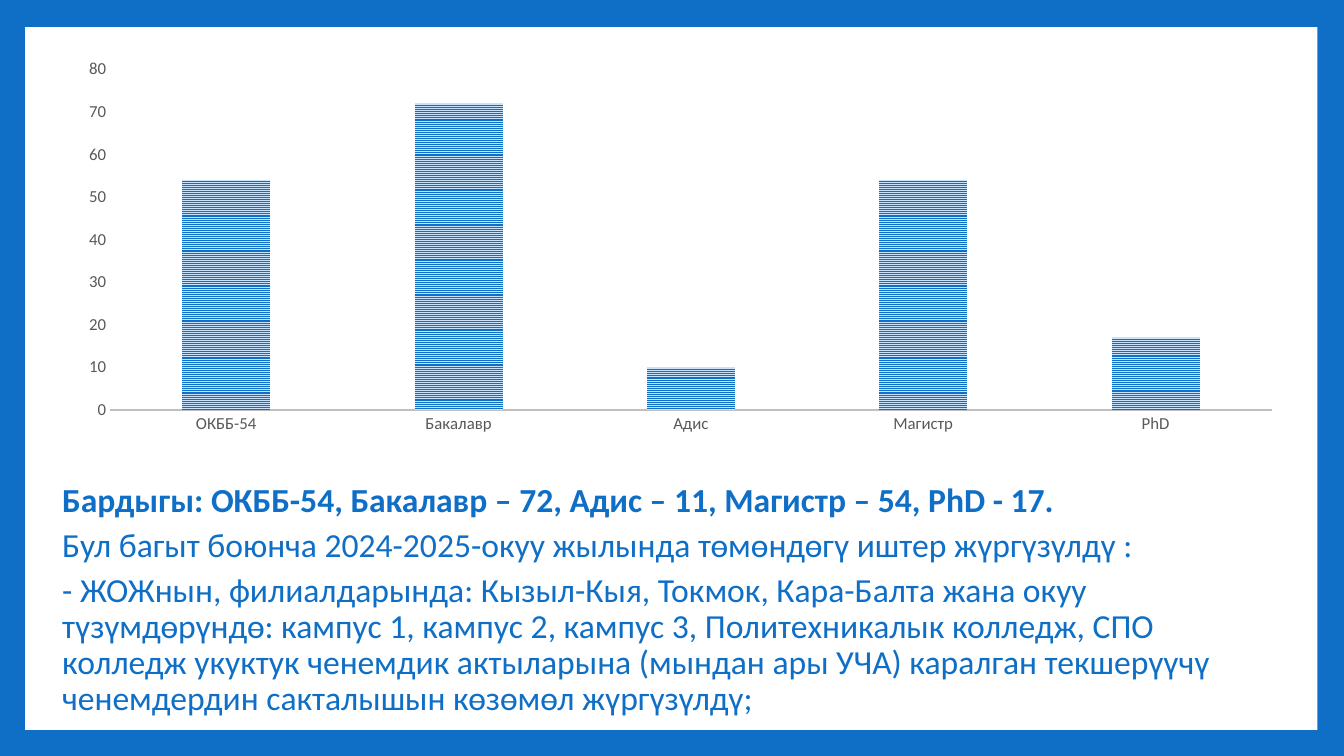
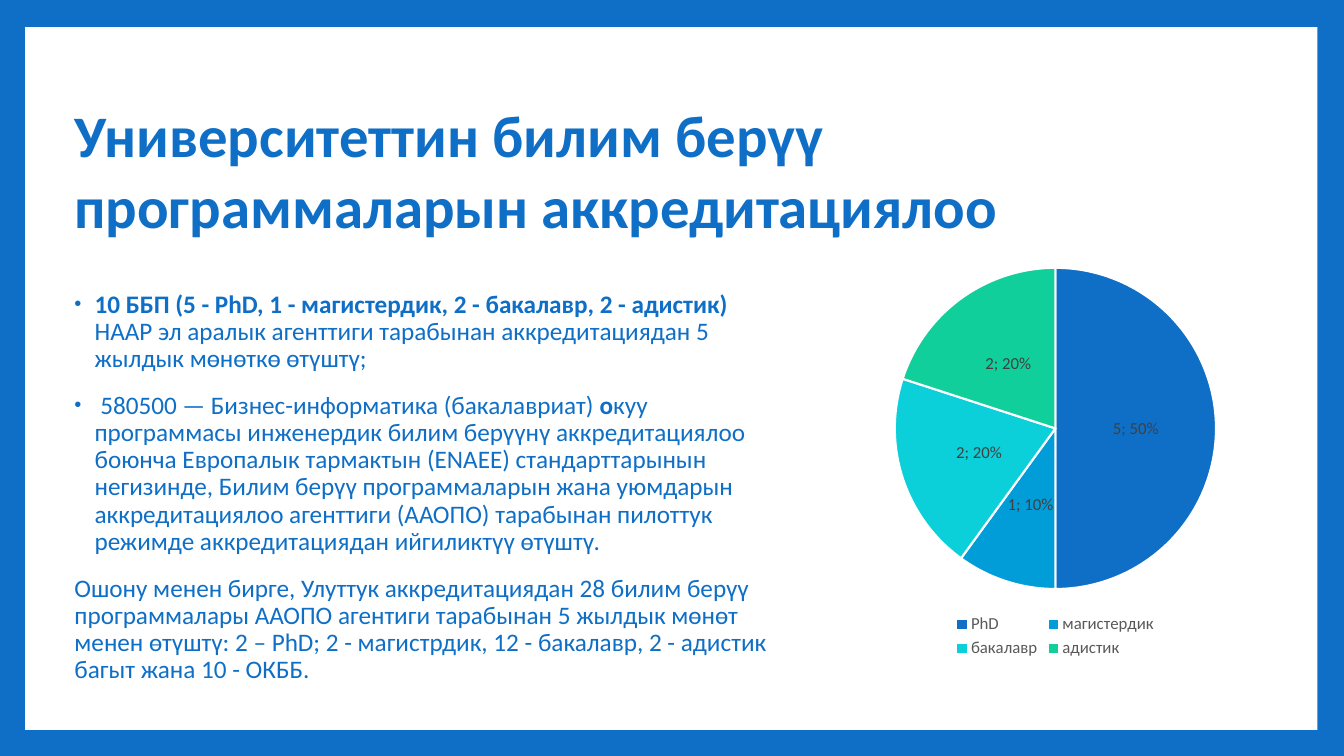
from lxml.etree import SubElement
from pptx import Presentation
from pptx.chart.data import CategoryChartData
from pptx.dml.color import RGBColor
from pptx.enum.chart import (
    XL_CHART_TYPE, XL_LABEL_POSITION, XL_LEGEND_POSITION, XL_TICK_MARK)
from pptx.enum.dml import MSO_PATTERN
from pptx.enum.shapes import MSO_SHAPE
from pptx.oxml.ns import qn
from pptx.util import Pt

BARS = XL_CHART_TYPE.COLUMN_CLUSTERED
PIE = XL_CHART_TYPE.PIE
CENTER = XL_LABEL_POSITION.CENTER
BOTTOM = XL_LEGEND_POSITION.BOTTOM
NONE = XL_TICK_MARK.NONE
LINES = MSO_PATTERN.NARROW_HORIZONTAL
RECT = MSO_SHAPE.RECTANGLE

HUES = {
    "blue": "0F6FC6", "sky": "009DD9", "aqua": "0BD0D9", "green": "10CF9B",
    "pale": "C8E3FB", "white": "FFFFFF", "axis": "BFBFBF",
    "gray": "595959", "dark": "404040", "black": "000000",
}


def hue(name):
    return RGBColor.from_string(HUES[name])


def put(item, **values):
    for key, value in values.items():
        setattr(item, key, value)


class Deck:
    """Hold the shared style and the current slide."""

    face = "Calibri"

    def __init__(self):
        self.show = Presentation()
        put(self.show, slide_width=Pt(960), slide_height=Pt(540))
        self.slide = None

    def page(self):
        self.slide = self.show.slides.add_slide(self.show.slide_layouts[6])
        back = self.slide.background.fill
        back.solid()
        back.fore_color.rgb = hue("blue")
        panel = self.slide.shapes.add_shape(
            RECT, *map(Pt, (18, 19.4, 923, 502)))
        panel.shadow.inherit = False
        panel.fill.solid()
        panel.fill.fore_color.rgb = hue("white")
        panel.line.fill.background()

    def font(self, font, size, color="blue", bold=False):
        put(font, name=self.face, size=Pt(size), bold=bold)
        font.color.rgb = hue(color)

    def bullet(self, props):
        color = SubElement(props, qn("a:buClr"))
        SubElement(color, qn("a:srgbClr"), val=HUES["blue"])
        SubElement(props, qn("a:buSzPct"), val="80000")
        SubElement(props, qn("a:buFont"), typeface="Arial")
        SubElement(props, qn("a:buChar"), char="•")

    def text(self, box, paras, size, gap=0, lead=0.9):
        frame = self.slide.shapes.add_textbox(*map(Pt, box)).text_frame
        frame.word_wrap = True
        for num, (dot, runs) in enumerate(paras):
            para = frame.add_paragraph() if num else frame.paragraphs[0]
            props = para._p.get_or_add_pPr()
            left, dent = (18, -14.4) if dot else (3.6, 0)
            props.set("marL", str(int(Pt(left))))
            props.set("indent", str(int(Pt(dent))))
            if dot:
                self.bullet(props)
            put(para, line_spacing=lead, space_before=Pt(gap if num else 0))
            for words, bold in runs:
                run = para.add_run()
                run.text = words
                self.font(run.font, size, bold=bold)

    def chart(self, kind, box, cats, vals):
        data = CategoryChartData()
        data.categories = cats
        data.add_series("Series 1", vals)
        chart = self.slide.shapes.add_chart(kind, *map(Pt, box), data).chart
        put(chart, has_title=False, has_legend=False)
        self.font(chart.font, 10, "black")
        return chart

    def bars(self, box, cats, vals):
        chart = self.chart(BARS, box, cats, vals)
        plot = chart.plots[0]
        put(plot, gap_width=164, overlap=-22, vary_by_categories=False)
        fill = plot.series[0].format.fill
        fill.patterned()
        fill.pattern = LINES
        fill.fore_color.rgb = hue("blue")
        fill.back_color.rgb = hue("pale")
        for axis in (chart.category_axis, chart.value_axis):
            put(axis, major_tick_mark=NONE, minor_tick_mark=NONE,
                has_major_gridlines=False)
            self.font(axis.tick_labels.font, 12, "gray")
        put(chart.value_axis, minimum_scale=0, maximum_scale=80, major_unit=10)
        chart.value_axis.format.line.fill.background()
        line = chart.category_axis.format.line
        line.width = Pt(1.5)
        line.color.rgb = hue("axis")

    def pie(self, box, cats, vals, colors):
        chart = self.chart(PIE, box, cats, vals)
        chart.has_legend = True
        put(chart.legend, position=BOTTOM, include_in_layout=False)
        self.font(chart.legend.font, 12, "gray")
        plot = chart.plots[0]
        plot.vary_by_categories = True
        for num, color in enumerate(colors):
            part = plot.series[0].points[num].format
            part.fill.solid()
            part.fill.fore_color.rgb = hue(color)
            part.line.width = Pt(1.5)
            part.line.color.rgb = hue("white")
        tags = plot.series[0].data_labels
        put(tags, show_value=True, show_percentage=True, position=CENTER)
        self.font(tags.font, 12, "dark")


def main():
    deck = Deck()

    deck.page()
    deck.text((33.8, 342, 892, 198), [
        (False, [("Бардыгы: ОКББ-54, Бакалавр – 72, Адис – 11, "
                  "Магистр – 54, PhD - 17.", True)]),
        (False, [("Бул багыт боюнча 2024-2025-окуу жылында төмөндөгү "
                  "иштер жүргүзүлдү :", False)]),
        (False, [("- ЖОЖнын, филиалдарында: Кызыл-Кыя, Токмок, Кара-Балта "
                  "жана окуу түзүмдөрүндө: кампус 1, кампус 2, кампус 3, "
                  "Политехникалык колледж, СПО колледж укуктук ченемдик "
                  "актыларына (мындан ары УЧА) каралган текшерүүчү "
                  "ченемдердин сакталышын көзөмөл жүргүзүлдү;", False)]),
    ], 24, gap=6)
    deck.bars((46, 36.7, 880, 278.6),
              ["ОКББ-54", "Бакалавр", "Адис", "Магистр", "PhD"],
              [54, 72, 10, 54, 17])

    deck.page()
    deck.text((42.5, 67, 851, 108.7), [
        (False, [("Университеттин билим берүү программаларын "
                  "аккредитациялоо", True)]),
    ], 42, lead=1.0)
    deck.text((42.5, 204.5, 519, 281.5), [
        (True, [("10 ББП (5 - PhD, 1 - магистердик, 2 - бакалавр, "
                 "2 - адистик)", True),
                (" НААР эл аралык агенттиги тарабынан аккредитациядан "
                 "5 жылдык мөнөткө өтүштү;", False)]),
        (True, [(" 580500 — Бизнес-информатика (бакалавриат)", False),
                (" о", True),
                ("куу программасы инженердик билим берүүнү аккредитациялоо "
                 "боюнча Европалык тармактын (ENAEE) стандарттарынын "
                 "негизинде, Билим берүү программаларын жана уюмдарын "
                 "аккредитациялоо агенттиги (ААОПО) тарабынан пилоттук "
                 "режимде аккредитациядан ийгиликтүү өтүштү.", False)]),
        (False, [("Ошону менен бирге, Улуттук аккредитациядан 28 билим "
                  "берүү программалары ААОПО агентиги тарабынан 5 жылдык "
                  "мөнөт менен өтүштү: 2 – PhD; 2 - магистрдик, "
                  "12 - бакалавр, 2 - адистик багыт жана 10 - ОКББ.", False)]),
    ], 18, gap=14)
    deck.pie((590.4, 181.4, 327, 291.6),
             ["PhD", "магистердик", "бакалавр", "адистик"],
             [5, 1, 2, 2], ["blue", "sky", "aqua", "green"])

    deck.show.save("out.pptx")


if __name__ == "__main__":
    main()
